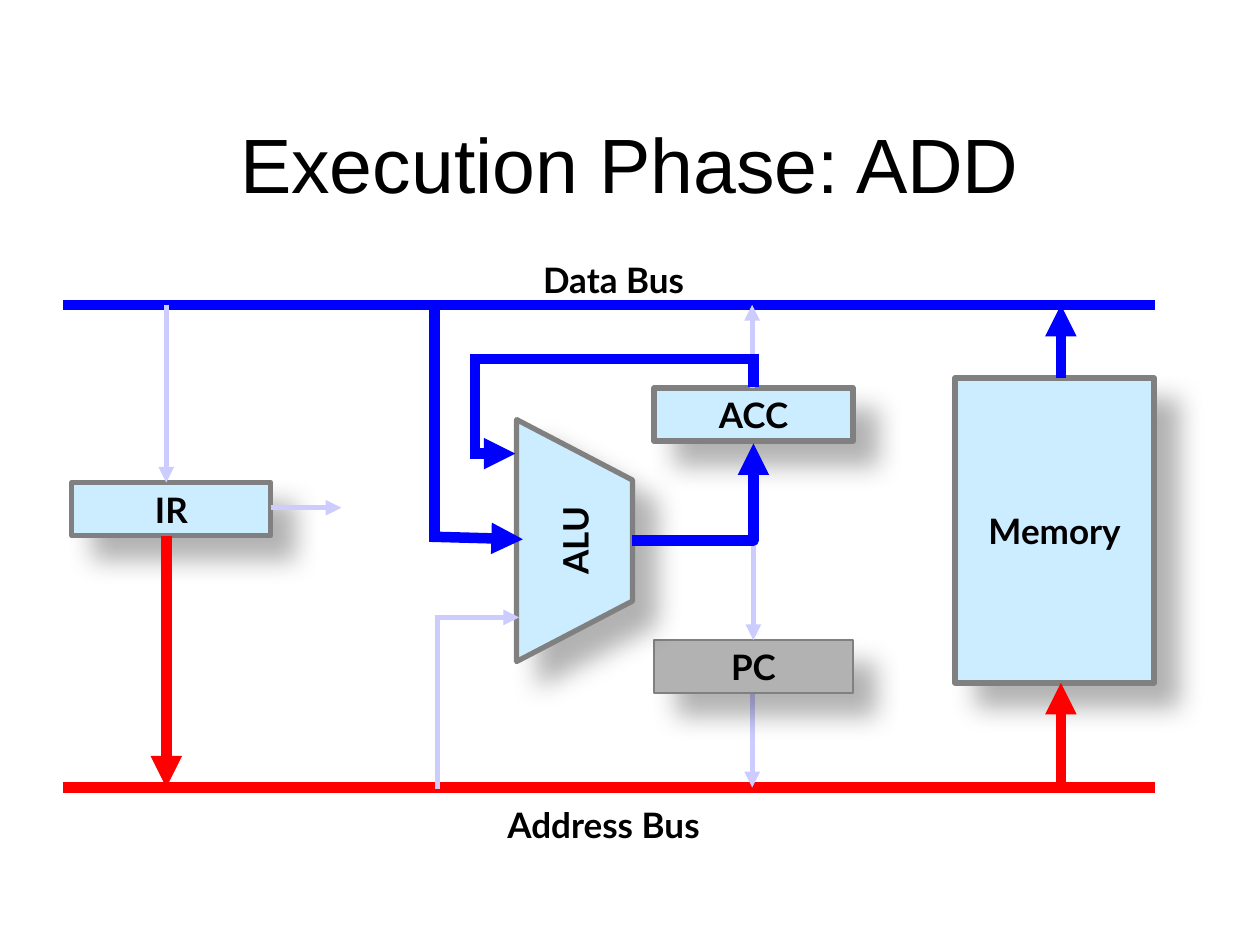
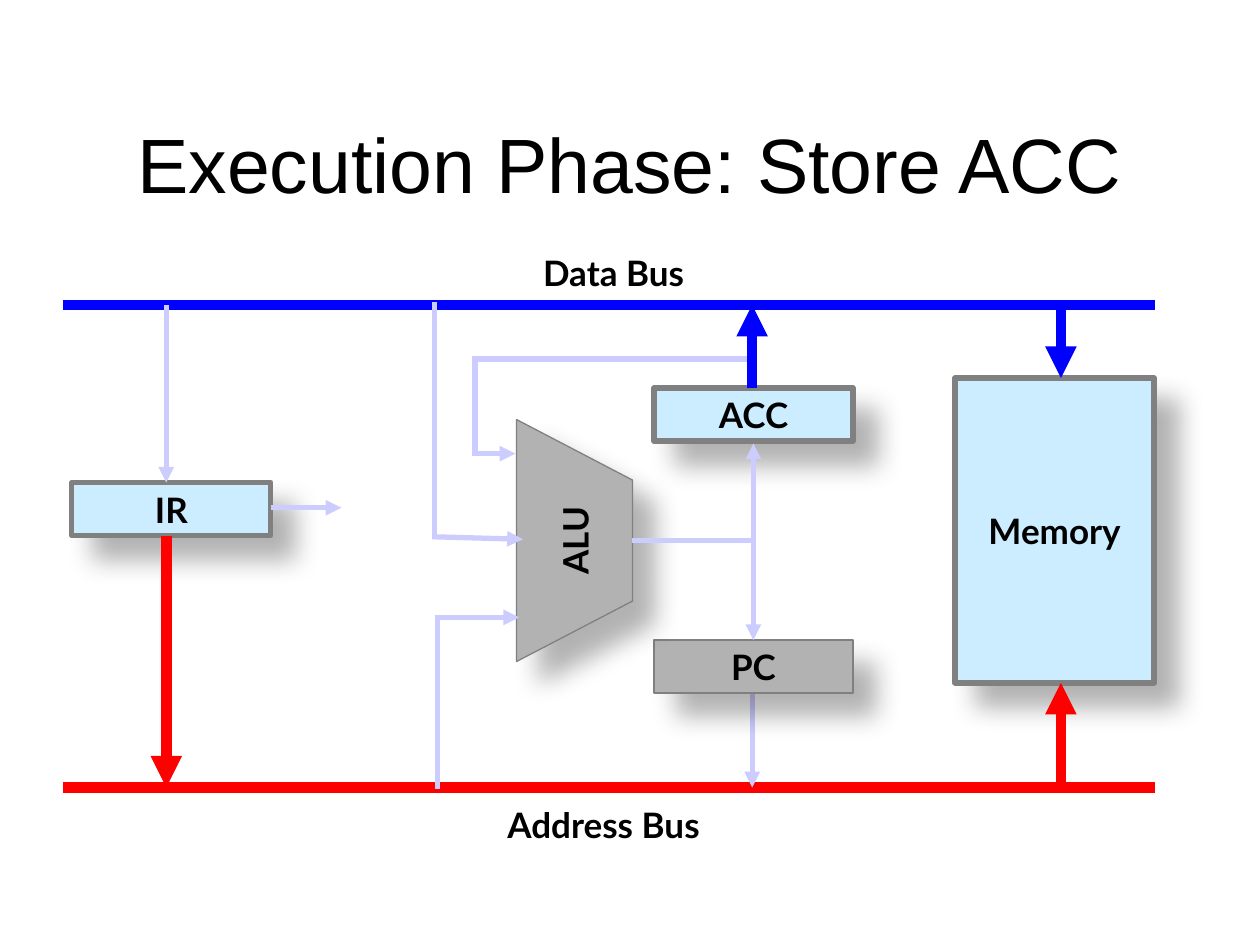
from dataclasses import dataclass

from lxml import etree
from pptx import Presentation
from pptx.dml.color import RGBColor
from pptx.enum.shapes import MSO_CONNECTOR, MSO_SHAPE
from pptx.enum.text import MSO_ANCHOR, PP_ALIGN
from pptx.oxml.ns import qn
from pptx.util import Inches, Pt

RECTANGLE = MSO_SHAPE.RECTANGLE
STRAIGHT, ELBOW = MSO_CONNECTOR.STRAIGHT, MSO_CONNECTOR.ELBOW
CENTER, MIDDLE, TOP = PP_ALIGN.CENTER, MSO_ANCHOR.MIDDLE, MSO_ANCHOR.TOP

COLORS = {
    "text": "000000",
    "shadow": "000000",
    "active": "CCECFF",
    "inactive": "B2B2B2",
    "outline": "808080",
    "idle": "CCCCFF",
    "data": "0000FF",
    "address": "FF0000",
}
WIRE_POINTS = {"idle": 3, "data": 6, "address": 6}
TITLE_FONT, LABEL_FONT = "Arial", "Lato"

BUS_LEFT, BUS_RIGHT = 0.5, 9.17
DATA_Y, ADDRESS_Y = 2.42, 6.25
IR_X, ACC_X, MEMORY_X = 1.32, 5.97, 8.42
MEMORY_TOP, MEMORY_BOTTOM = 3, 5.42
ALU_OUT = (5.02, 4.29)
ACC_IN, PC_IN = (5.98, 3.52), (5.98, 5.08)
# Wide edge on top; a quarter turn makes it face left
ALU_OUTLINE = [(3.6, 3.83), (4.08, 4.75), (5.04, 4.75), (5.52, 3.83)]


@dataclass(frozen=True)
class Unit:
    name: str
    left: float
    top: float
    width: float = 1.58
    height: float = 0.42


@dataclass(frozen=True)
class Wire:
    start: tuple[float, float]
    end: tuple[float, float]
    signal: str = "idle"
    arrow: bool = True
    bent: bool = False


@dataclass(frozen=True)
class Phase:
    title: str
    data_label_top: float
    inactive: set[str]
    wires: list[Wire]


UNITS = [
    Unit("Memory", 7.58, MEMORY_TOP, height=MEMORY_BOTTOM - MEMORY_TOP),
    Unit("IR", 0.57, 3.83),
    Unit("ACC", 5.19, 3.08),
    Unit("PC", 5.19, 5.08),
]
# Wires that lie behind the units
BACK_WIRES = [
    Wire((BUS_LEFT, ADDRESS_Y), (BUS_RIGHT, ADDRESS_Y), "address", arrow=False),
    Wire((BUS_LEFT, DATA_Y), (BUS_RIGHT, DATA_Y), "data", arrow=False),
    Wire((ACC_X, 5.25), (ACC_X, ADDRESS_Y)),
]
SHARED_WIRES = [
    Wire((MEMORY_X, ADDRESS_Y), (MEMORY_X, MEMORY_BOTTOM), "address"),
    Wire((IR_X, DATA_Y), (IR_X, 3.83)),
    Wire((IR_X, 4.25), (IR_X, ADDRESS_Y), "address"),
    Wire((2.15, 4.03), (2.71, 4.03)),
    Wire((3.45, 4.9), (4.12, 4.9)),
    Wire((3.47, 4.88), (3.47, 6.26), arrow=False),
    Wire(ALU_OUT, PC_IN, bent=True),
]


def alu_inputs(signal: str) -> list[Wire]:
    """Wires from the data bus and ACC; corners overlap by half a line width."""
    half = WIRE_POINTS[signal] / 72 / 2
    return [
        Wire((3.43, 4.26), (4.15, 4.28), signal),
        Wire((3.45, 4.26 + half), (3.45, 2.4), signal, arrow=False),
        Wire((5.98 + half, 2.85), (3.79, 2.85), signal, arrow=False),
        Wire((3.77, 2.85 - half), (3.77, 3.6 + half), signal, arrow=False),
        Wire((3.76, 3.6), (4.09, 3.6), signal),
    ]


PHASES = [
    Phase("Execution Phase: ADD", 2, {"PC"}, [
        Wire((MEMORY_X, MEMORY_TOP), (MEMORY_X, DATA_Y), "data"),
        Wire((ACC_X, 3.08), (ACC_X, DATA_Y)),
        *alu_inputs("data"),
        Wire((5.98, 2.85), (5.98, 3.07), "data", arrow=False),
        Wire(ALU_OUT, ACC_IN, "data", bent=True),
    ]),
    Phase("Execution Phase: Store ACC", 1.95, {"PC", "ALU"}, [
        Wire((MEMORY_X, DATA_Y), (MEMORY_X, MEMORY_TOP), "data"),
        *alu_inputs("idle"),
        Wire(ALU_OUT, ACC_IN, bent=True),
        Wire((ACC_X, 3.08), (ACC_X, DATA_Y), "data"),
    ]),
]


def rgb(name: str) -> RGBColor:
    return RGBColor.from_string(COLORS[name])


def write_text(shape, text: str, *, size=20, font=LABEL_FONT, bold=True,
               anchor=MIDDLE, wrap=False) -> None:
    frame = shape.text_frame
    frame.text = text
    frame.word_wrap = wrap
    frame.vertical_anchor = anchor
    paragraph = frame.paragraphs[0]
    paragraph.alignment = CENTER
    paragraph.font.size = Pt(size)
    paragraph.font.name = font
    paragraph.font.bold = bold
    paragraph.font.color.rgb = rgb("text")


def add_shadow(shape) -> None:
    shape.shadow.inherit = False
    effects = shape._element.spPr.find(qn("a:effectLst"))
    shadow = etree.SubElement(
        effects, qn("a:outerShdw"), blurRad=str(Pt(15)), dist=str(Pt(18)),
        dir=str(45 * 60000), algn="ctr", rotWithShape="0")
    color = etree.SubElement(shadow, qn("a:srgbClr"), val=COLORS["shadow"])
    etree.SubElement(color, qn("a:alpha"), val="30000")


def style_unit(shape, name: str, inactive: set[str]) -> None:
    idle = name in inactive
    shape.fill.solid()
    shape.fill.fore_color.rgb = rgb("inactive" if idle else "active")
    shape.line.color.rgb = rgb("outline")
    shape.line.width = Pt(0.75 if idle else 3)
    add_shadow(shape)
    write_text(shape, name)


def add_unit(slide, unit: Unit, inactive: set[str]) -> None:
    box = slide.shapes.add_shape(RECTANGLE, Inches(unit.left), Inches(unit.top),
                                 Inches(unit.width), Inches(unit.height))
    style_unit(box, unit.name, inactive)


def add_alu(slide, inactive: set[str]) -> None:
    first, *others = [(Inches(x), Inches(y)) for x, y in ALU_OUTLINE]
    builder = slide.shapes.build_freeform(*first)
    builder.add_line_segments(others, close=True)
    alu = builder.convert_to_shape()
    alu.rotation = 270
    style_unit(alu, "ALU", inactive)


def add_wire(slide, wire: Wire) -> None:
    ends = [Inches(value) for value in (*wire.start, *wire.end)]
    line = slide.shapes.add_connector(ELBOW if wire.bent else STRAIGHT, *ends)
    line.line.color.rgb = rgb(wire.signal)
    line.line.width = Pt(WIRE_POINTS[wire.signal])
    properties = line._element.spPr
    if wire.bent:
        properties.find(qn("a:prstGeom")).set("prst", "bentConnector2")
    if wire.arrow:
        etree.SubElement(properties.find(qn("a:ln")), qn("a:tailEnd"), type="triangle")
    etree.SubElement(properties, qn("a:effectLst"))


def add_label(slide, text: str, left: float, top: float) -> None:
    label = slide.shapes.add_textbox(Inches(left), Inches(top), Inches(3.08), Inches(0.43))
    write_text(label, text, anchor=TOP, wrap=True)


def add_title(slide, text: str) -> None:
    title = slide.shapes.title
    title.left, title.top = Inches(0.75), Inches(0.67)
    title.width, title.height = Inches(8.5), Inches(1.25)
    write_text(title, text, size=44, font=TITLE_FONT, bold=False, wrap=True)


def add_phase(deck, phase: Phase) -> None:
    slide = deck.slides.add_slide(deck.slide_layouts.get_by_name("Title Only"))
    add_title(slide, phase.title)
    for wire in BACK_WIRES:
        add_wire(slide, wire)
    for unit in UNITS:
        add_unit(slide, unit, phase.inactive)
    add_alu(slide, phase.inactive)
    for wire in SHARED_WIRES + phase.wires:
        add_wire(slide, wire)
    add_label(slide, "Data Bus", 3.33, phase.data_label_top)
    add_label(slide, "Address Bus", 3.25, 6.33)


def main() -> None:
    deck = Presentation()
    deck.slide_width, deck.slide_height = Inches(10), Inches(7.5)
    for phase in PHASES:
        add_phase(deck, phase)
    deck.save("out.pptx")


if __name__ == "__main__":
    main()
